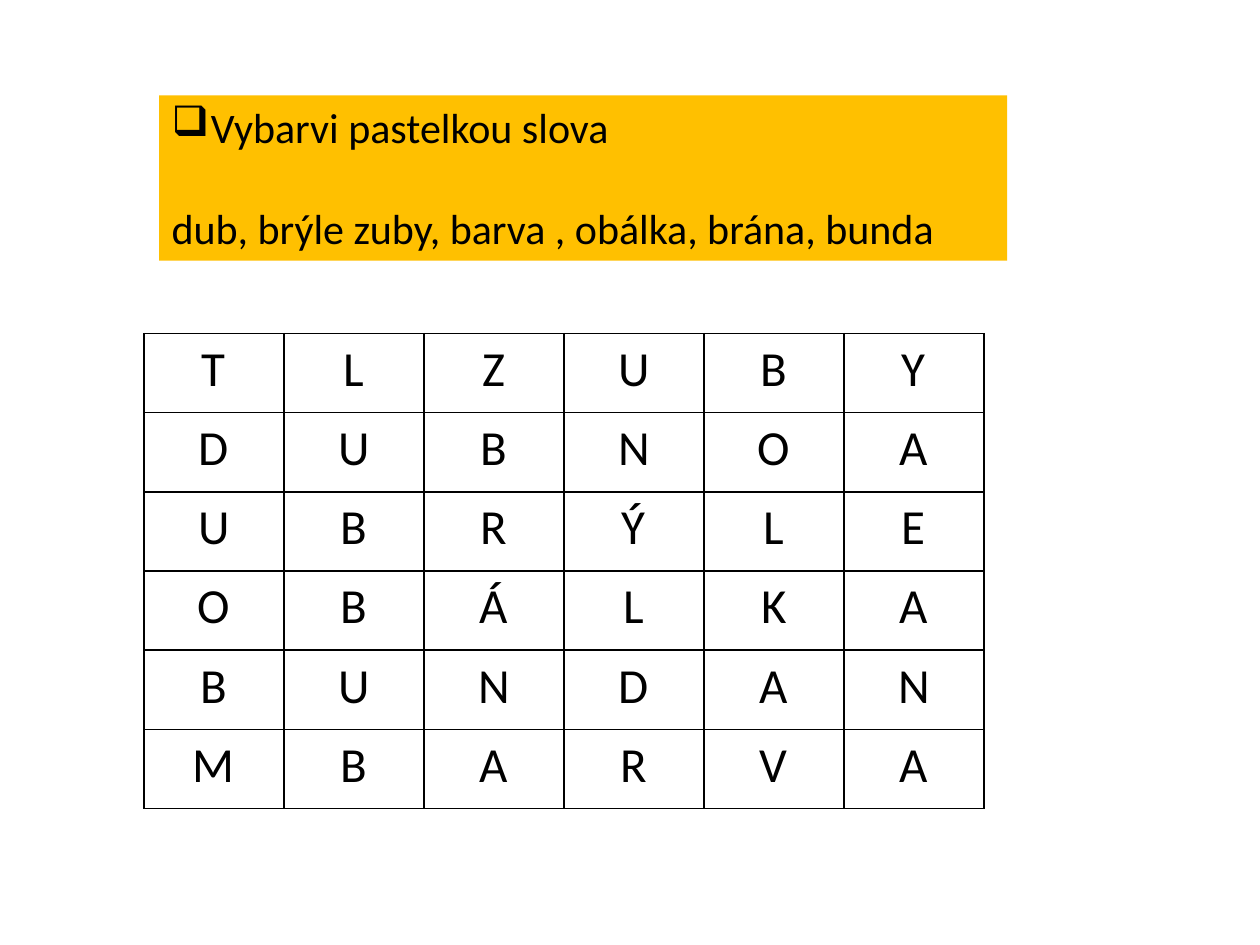
from dataclasses import dataclass

from lxml.etree import SubElement
from pptx import Presentation
from pptx.dml.color import RGBColor
from pptx.enum.shapes import MSO_SHAPE
from pptx.enum.text import MSO_ANCHOR, PP_ALIGN
from pptx.oxml.ns import qn
from pptx.util import Pt

COLORS = {"text": "000000", "border": "000000", "banner": "FFC000"}
FONT = "Calibri"
LETTERS = ["TLZUBY", "DUBNOA", "UBRÝLE", "OBÁLKA", "BUNDAN", "MBARVA"]


@dataclass
class Box:
    left: float
    top: float
    width: float
    height: float

    def emu(self) -> list:
        return [Pt(v) for v in (self.left, self.top, self.width, self.height)]


@dataclass
class Line:
    text: str
    bullet: str = ""
    indent: float = 0
    space_before: float = 0


def add_text(p, text: str, size: float) -> None:
    r = p.add_run()
    r.text = text
    for name, value in {"name": FONT, "size": Pt(size)}.items():
        setattr(r.font, name, value)
    r.font.color.rgb = RGBColor.from_string(COLORS["text"])


def set_borders(cell, width: float) -> None:
    tc_pr = cell._tc.get_or_add_tcPr()
    for side in ("a:lnL", "a:lnR", "a:lnT", "a:lnB"):
        ln = SubElement(tc_pr, qn(side), w=str(Pt(width)))
        fill = SubElement(ln, qn("a:solidFill"))
        SubElement(fill, qn("a:srgbClr"), val=COLORS["border"])


def add_banner(slide, box: Box, lines: list[Line]) -> None:
    sp = slide.shapes.add_shape(MSO_SHAPE.RECTANGLE, *box.emu())
    sp.shadow.inherit = False
    sp.fill.solid()
    sp.fill.fore_color.rgb = RGBColor.from_string(COLORS["banner"])
    sp.line.fill.background()
    tf = sp.text_frame
    for name, value in {"word_wrap": True, "vertical_anchor": MSO_ANCHOR.TOP}.items():
        setattr(tf, name, value)
    for i, line in enumerate(lines):
        p = tf.add_paragraph() if i else tf.paragraphs[0]
        p.alignment = PP_ALIGN.LEFT
        p.space_before = Pt(line.space_before)
        if line.bullet:
            p_pr = p._p.get_or_add_pPr()
            p_pr.set("marL", str(Pt(line.indent)))
            p_pr.set("indent", str(-Pt(line.indent)))
            SubElement(p_pr, qn("a:buChar"), char=line.bullet)
        add_text(p, line.text, 24)


def add_letter_grid(slide, box: Box, rows: list[str]) -> None:
    frame = slide.shapes.add_table(len(rows), len(rows[0]), *box.emu())
    table = frame.table
    for name in ("first_row", "horz_banding"):
        setattr(table, name, False)
    for i, row in enumerate(rows):
        for j, letter in enumerate(row):
            cell = table.cell(i, j)
            set_borders(cell, 1)
            cell.fill.background()
            p = cell.text_frame.paragraphs[0]
            p.alignment = PP_ALIGN.CENTER
            add_text(p, letter, 28)


def main() -> None:
    prs = Presentation()
    prs.slide_width, prs.slide_height = Pt(720), Pt(540)
    slide = prs.slides.add_slide(prs.slide_layouts[6])

    # Letter grid
    add_letter_grid(slide, Box(82.2, 190.6, 480, 271.5), LETTERS)

    # Task banner
    add_banner(slide, Box(91, 54.6, 484.5, 94.4), [
        Line("Vybarvi pastelkou slova", bullet="❑", indent=22.5),
        Line("dub, brýle zuby, barva , obálka, brána, bunda", space_before=29),
    ])

    prs.save("out.pptx")


if __name__ == "__main__":
    main()
